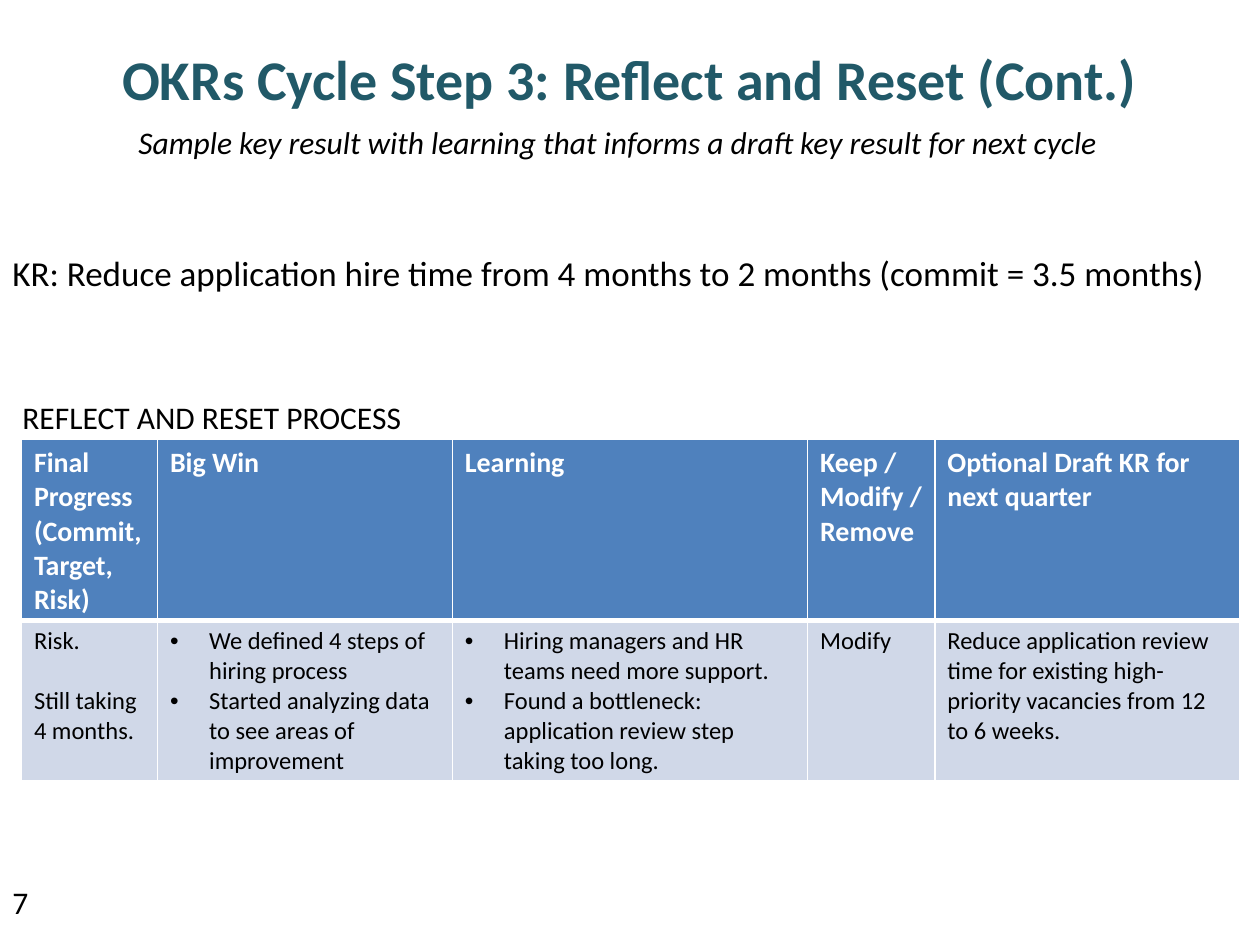
from dataclasses import dataclass

from lxml.etree import SubElement
from pptx import Presentation
from pptx.dml.color import RGBColor
from pptx.enum.text import MSO_ANCHOR as Anchor, PP_ALIGN as Align
from pptx.oxml.ns import qn
from pptx.util import Emu, Inches, Pt

WIDTH, HEIGHT = Inches(10), Inches(7.5)
FONT = "Calibri"
TEAL = RGBColor(0x21, 0x59, 0x68)
BLACK = RGBColor(0, 0, 0)
WHITE = RGBColor(0xFF, 0xFF, 0xFF)
HEADER_BLUE = RGBColor(0x4F, 0x81, 0xBD)
PALE_BLUE = RGBColor(0xD0, 0xD8, 0xE8)


@dataclass(frozen=True)
class Area:
    """A rectangle in percent of the slide's width and height."""
    left: float
    top: float
    width: float
    height: float

    def lengths(self) -> tuple[Emu, Emu, Emu, Emu]:
        return (across(self.left), down(self.top),
                across(self.width), down(self.height))


@dataclass(frozen=True)
class Label:
    text: str
    area: Area
    size: int = 18
    italic: bool = False
    indent: float = 0
    wrap: bool = True


@dataclass(frozen=True)
class Column:
    width: float
    heading: tuple[str, ...]
    body: tuple[str, ...]
    bulleted: bool = False


def across(percent: float) -> Emu:
    return Emu(round(WIDTH * percent / 100))


def down(percent: float) -> Emu:
    return Emu(round(HEIGHT * percent / 100))


TITLE_AREA = Area(5, 4, 90, 16.67)
LABELS = (
    Label("Sample key result with learning that informs a draft key result for next cycle",
          Area(0, 12.4, 92.5, 5.33), italic=True, indent=10),
    Label("7", Area(0, 92.8, 9.2, 5.33)),
    Label("KR: Reduce application hire time from 4 months to 2 months (commit = 3.5 months)",
          Area(0, 26, 97.5, 5.87), size=20, wrap=False),
    Label("REFLECT AND RESET PROCESS", Area(0.8, 41.47, 32.4, 5.33), wrap=False),
)
TABLE_LEFT, TABLE_TOP = 1.7, 46.53
ROW_HEIGHTS = (18.93, 16.93)
COLUMNS = (
    Column(10.8, ("Final Progress", "(Commit,", "Target,", "Risk)"),
           ("Risk.", "Still taking 4 months.")),
    Column(23.4, ("Big Win",),
           ("We defined 4 steps of hiring process",
            "Started analyzing data to see areas of improvement"), bulleted=True),
    Column(28.2, ("Learning",),
           ("Hiring managers and HR teams need more support.",
            "Found a bottleneck: application review step taking too long."), bulleted=True),
    Column(10.1, ("Keep / Modify / Remove",), ("Modify",)),
    Column(24.2, ("Optional Draft KR for next quarter",),
           ("Reduce application review time for existing high-priority vacancies "
            "from 12 to 6 weeks.",)),
)


def write(frame, *lines: str, size: int, color: RGBColor = BLACK, bold: bool = False,
          italic: bool = False, align: Align = Align.LEFT, indent: float = 0,
          bulleted: bool = False, gap: float = 0) -> None:
    """Fill a text frame with one paragraph a line, gap points apart."""
    for index, line in enumerate(lines):
        para = frame.paragraphs[0] if index == 0 else frame.add_paragraph()
        para.alignment = align
        if index and gap:
            para.space_before = Pt(gap)
        properties = para._p.get_or_add_pPr()
        if indent:
            properties.set("marL", str(across(indent)))
        if bulleted:
            properties.set("indent", str(-across(indent)))
            SubElement(properties, qn("a:buFont"), typeface="Arial")
            SubElement(properties, qn("a:buChar"), char="•")
        span = para.add_run()
        span.text = line
        font = span.font
        font.name, font.size = FONT, Pt(size)
        font.bold, font.italic = bold, italic
        font.color.rgb = color


def add_label(page, label: Label) -> None:
    frame = page.shapes.add_textbox(*label.area.lengths()).text_frame
    frame.word_wrap = label.wrap
    write(frame, label.text, size=label.size, italic=label.italic, indent=label.indent)


def paint_cell(cell, fill: RGBColor, top: float, bottom: float) -> None:
    """Give a cell white borders, with top and bottom widths in points, and a fill."""
    properties = cell._tc.get_or_add_tcPr()
    for side, points in (("L", 1), ("R", 1), ("T", top), ("B", bottom)):
        line = SubElement(properties, qn(f"a:ln{side}"), w=str(Pt(points)))
        SubElement(SubElement(line, qn("a:solidFill")), qn("a:srgbClr"), val=str(WHITE))
    cell.fill.solid()
    cell.fill.fore_color.rgb = fill


def add_review_table(page) -> None:
    area = Area(TABLE_LEFT, TABLE_TOP, sum(column.width for column in COLUMNS),
                sum(ROW_HEIGHTS))
    table = page.shapes.add_table(len(ROW_HEIGHTS), len(COLUMNS), *area.lengths()).table
    for row, height in zip(table.rows, ROW_HEIGHTS):
        row.height = down(height)
    for index, column in enumerate(COLUMNS):
        table.columns[index].width = across(column.width)
        heading, body = table.cell(0, index), table.cell(1, index)
        paint_cell(heading, HEADER_BLUE, top=1, bottom=3)
        paint_cell(body, PALE_BLUE, top=3, bottom=1)
        write(heading.text_frame, *column.heading, size=16, color=WHITE, bold=True)
        write(body.text_frame, *column.body, size=14, bulleted=column.bulleted,
              indent=3.1 if column.bulleted else 0, gap=0 if column.bulleted else 17)


def main() -> None:
    deck = Presentation()
    deck.slide_width, deck.slide_height = WIDTH, HEIGHT
    page = deck.slides.add_slide(deck.slide_layouts[5])
    title = page.shapes.title
    title.left, title.top, title.width, title.height = TITLE_AREA.lengths()
    title.text_frame.vertical_anchor = Anchor.TOP
    write(title.text_frame, "OKRs Cycle Step 3: Reflect and Reset (Cont.)",
          size=32, color=TEAL, bold=True, align=Align.CENTER)
    for label in LABELS:
        add_label(page, label)
    add_review_table(page)
    deck.save("out.pptx")


if __name__ == "__main__":
    main()
